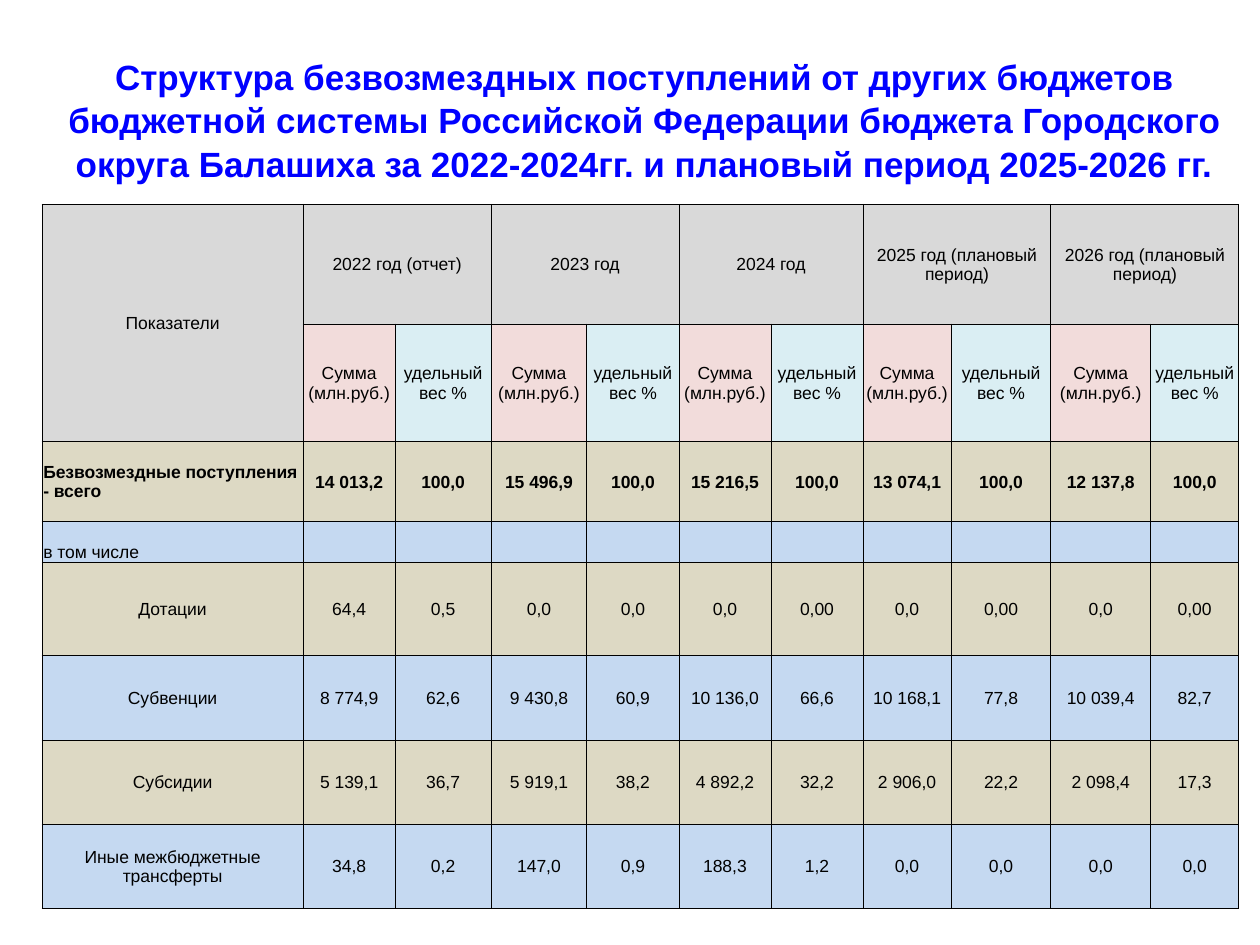
from lxml import etree
from pptx import Presentation
from pptx.dml.color import RGBColor
from pptx.enum import text
from pptx.oxml import ns
from pptx.util import Pt

COLORS = {
    "title": "0000FF",
    "ink": "000000",
    "header": "D9D9D9",
    "amount": "F2DCDB",
    "share": "DAEEF3",
    "tan": "DDD9C4",
    "blue": "C5D9F1",
}
FONT = "Arial"
TITLE = (
    "Структура безвозмездных поступлений от других бюджетов бюджетной системы "
    "Российской Федерации бюджета Городского округа Балашиха за 2022-2024гг. "
    "и плановый период 2025-2026 гг."
)
YEARS = [
    "2022 год (отчет)",
    "2023 год",
    "2024 год",
    "2025 год (плановый период)",
    "2026 год (плановый период)",
]
TOTAL = "Безвозмездные поступления - всего"
INCLUDING = "в том числе"
ROWS = [
    [TOTAL, "14 013,2", "100,0", "15 496,9", "100,0", "15 216,5", "100,0",
     "13 074,1", "100,0", "12 137,8", "100,0"],
    [INCLUDING] + [""] * 10,
    ["Дотации", "64,4", "0,5", "0,0", "0,0", "0,0", "0,00", "0,0", "0,00", "0,0", "0,00"],
    ["Субвенции", "8 774,9", "62,6", "9 430,8", "60,9", "10 136,0", "66,6",
     "10 168,1", "77,8", "10 039,4", "82,7"],
    ["Субсидии", "5 139,1", "36,7", "5 919,1", "38,2", "4 892,2", "32,2",
     "2 906,0", "22,2", "2 098,4", "17,3"],
    ["Иные межбюджетные трансферты", "34,8", "0,2", "147,0", "0,9", "188,3", "1,2",
     "0,0", "0,0", "0,0", "0,0"],
]
COLUMN_WIDTHS = [149.2, 52.6, 54.8, 54.8, 52.6, 52.6, 52.6, 50.4, 57, 57, 50.4]
ROW_HEIGHTS = [68.4, 66.9, 46.1, 23, 53.2, 48.6, 48.1, 48.1]


def format_text(text_frame, size, color, bold, align):
    for paragraph in text_frame.paragraphs:
        paragraph.alignment = align
        for run in paragraph.runs:
            run.font.name = FONT
            run.font.size = Pt(size)
            run.font.bold = bold
            run.font.color.rgb = RGBColor.from_string(COLORS[color])


def add_title(slide):
    title = slide.shapes.title
    title.left, title.top, title.width, title.height = Pt(22.3), Pt(28), Pt(692), Pt(80)
    text_frame = title.text_frame
    text_frame.text = TITLE
    text_frame.word_wrap = True
    text_frame.auto_size = text.MSO_AUTO_SIZE.NONE
    text_frame.vertical_anchor = text.MSO_ANCHOR.MIDDLE
    text_frame.paragraphs[0].line_spacing = 1.04
    format_text(text_frame, 20, "title", True, text.PP_ALIGN.CENTER)


def set_borders(cell):
    properties = cell._tc.get_or_add_tcPr()
    for side in ("a:lnL", "a:lnR", "a:lnT", "a:lnB"):
        line = etree.SubElement(properties, ns.qn(side), w=str(Pt(0.5)))
        fill = etree.SubElement(line, ns.qn("a:solidFill"))
        etree.SubElement(fill, ns.qn("a:srgbClr"), val=COLORS["ink"])


def style_cell(cell, fill, bold=False, align=text.PP_ALIGN.CENTER,
               anchor=text.MSO_ANCHOR.MIDDLE):
    cell.margin_left = cell.margin_right = cell.margin_top = Pt(0.72)
    cell.margin_bottom = 0
    cell.vertical_anchor = anchor
    set_borders(cell)
    cell.fill.solid()
    cell.fill.fore_color.rgb = RGBColor.from_string(COLORS[fill])
    format_text(cell.text_frame, 10, "ink", bold, align)


def fill_header(table):
    table.cell(0, 0).merge(table.cell(1, 0))
    table.cell(0, 0).text = "Показатели"
    for index, year in enumerate(YEARS):
        column = 1 + 2 * index
        table.cell(0, column).merge(table.cell(0, column + 1))
        table.cell(0, column).text = year
        table.cell(1, column).text = "Сумма (млн.руб.)"
        table.cell(1, column + 1).text = "удельный вес %"
        style_cell(table.cell(1, column), "amount")
        style_cell(table.cell(1, column + 1), "share")
    for cell in [*table.rows[0].cells, table.cell(1, 0)]:
        style_cell(cell, "header")


def fill_body(table):
    for row, values in enumerate(ROWS):
        fill = ("tan", "blue")[row % 2]
        label = values[0]
        for column, value in enumerate(values):
            cell = table.cell(row + 2, column)
            cell.text = value
            left = column == 0 and label in (TOTAL, INCLUDING)
            align = text.PP_ALIGN.LEFT if left else text.PP_ALIGN.CENTER
            anchor = text.MSO_ANCHOR.BOTTOM if value == INCLUDING else text.MSO_ANCHOR.MIDDLE
            style_cell(cell, fill, label == TOTAL, align, anchor)


def add_budget_table(slide):
    frame = slide.shapes.add_table(
        len(ROW_HEIGHTS), len(COLUMN_WIDTHS), Pt(24), Pt(116.8),
        Pt(sum(COLUMN_WIDTHS)), Pt(sum(ROW_HEIGHTS)))
    table = frame.table
    for column, width in zip(table.columns, COLUMN_WIDTHS):
        column.width = Pt(width)
    for row, height in zip(table.rows, ROW_HEIGHTS):
        row.height = Pt(height)
    fill_header(table)
    fill_body(table)


def main():
    presentation = Presentation()
    presentation.slide_width, presentation.slide_height = Pt(720), Pt(540)
    slide = presentation.slides.add_slide(presentation.slide_layouts[5])
    add_title(slide)
    add_budget_table(slide)
    presentation.save("out.pptx")


if __name__ == "__main__":
    main()
